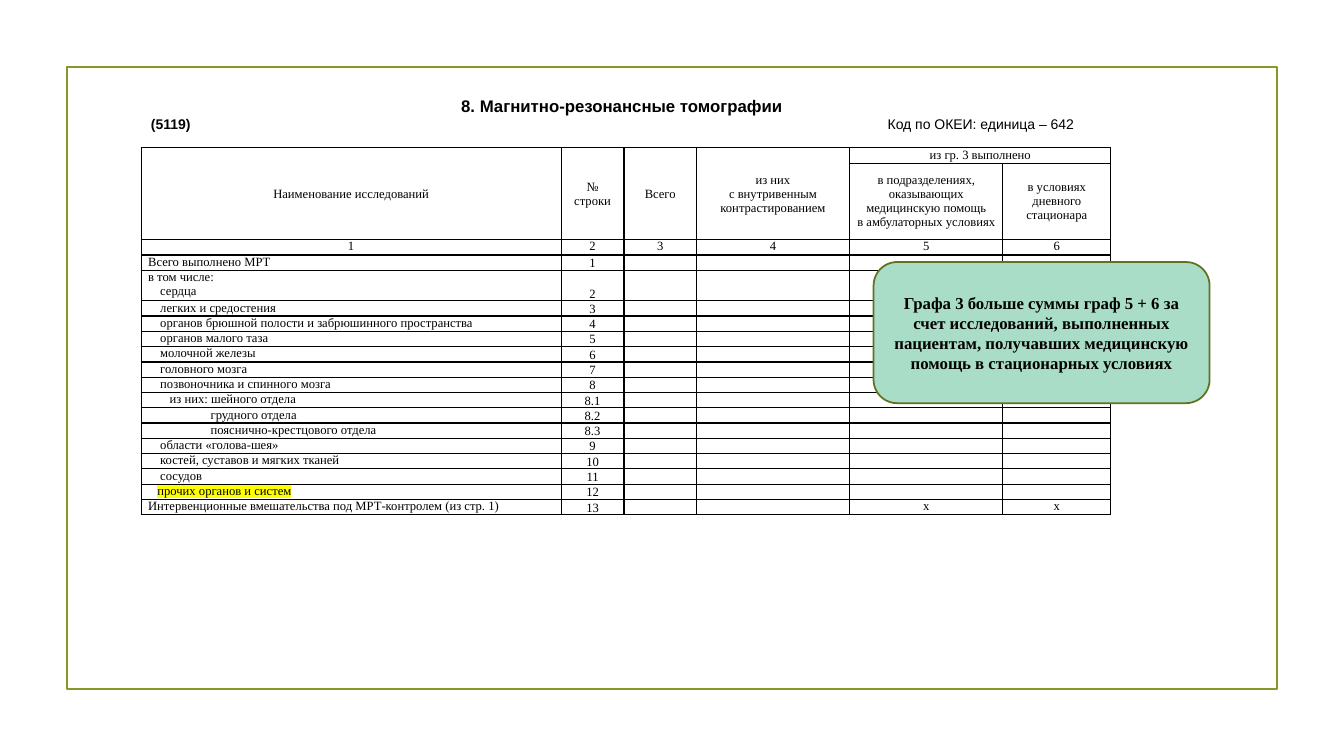
from dataclasses import dataclass

from lxml import etree
from pptx import Presentation
from pptx import util as u
from pptx.dml.color import RGBColor
from pptx.enum import shapes, text
from pptx.oxml import ns

UNIT = u.Inches(1) / 12
ALIGN = text.PP_ALIGN
ANCHOR = text.MSO_ANCHOR


@dataclass(frozen=True)
class Theme:
    serif: str = "Times New Roman"
    sans: str = "Arial"
    ink: str = "000000"
    frame: str = "83992A"
    callout: str = "A9DDC7"
    callout_line: str = "61711F"
    marker: str = "FFFF00"
    cell_size: float = 9
    code_size: float = 10
    title_size: float = 12
    outline: float = 1.25
    border: float = 1


THEME = Theme()
COLUMNS = (50, 7.5, 8.6, 18.25, 18.25, 12.85)
ROW, TALL_ROW, DOUBLE_ROW = 1.82, 9.12, 3.64
ITEM, SUBITEM, PART, OTHER = 1.44, 2.57, 7.44, 1.1
HEADINGS = (
    "Наименование исследований",
    "№\nстроки",
    "Всего",
    "из них\nс внутривенным контрастированием",
)
DONE_HEADING = "из гр. 3 выполнено"
DONE_PARTS = (
    "в подразделениях, оказывающих медицинскую помощь\nв амбулаторных условиях",
    "в условиях дневного стационара",
)
STUDIES = (
    ("1", [(0, "Всего выполнено МРТ")]),
    ("2", [(0, "в том числе:"), (ITEM, "сердца")]),
    ("3", [(ITEM, "легких и средостения")]),
    ("4", [(ITEM, "органов брюшной полости и забрюшинного пространства")]),
    ("5", [(ITEM, "органов малого таза")]),
    ("6", [(ITEM, "молочной железы")]),
    ("7", [(ITEM, "головного мозга")]),
    ("8", [(ITEM, "позвоночника и спинного мозга")]),
    ("8.1", [(SUBITEM, "из них: шейного отдела")]),
    ("8.2", [(PART, "грудного отдела")]),
    ("8.3", [(PART, "пояснично-крестцового отдела")]),
    ("9", [(ITEM, "области «голова-шея»")]),
    ("10", [(ITEM, "костей, суставов и мягких тканей")]),
    ("11", [(ITEM, "сосудов")]),
    ("12", [(OTHER, "прочих органов и систем")]),
    ("13", [(0, "Интервенционные вмешательства под МРТ-контролем (из стр. 1)")]),
)
HIGHLIGHTED = "12"
CROSSED = "13"


def grid(*cells):
    return [u.Emu(round(cell * UNIT)) for cell in cells]


def add_run(paragraph, words, size, face, bold=False, marker=None):
    run = paragraph.add_run()
    run.text = words
    run.font.size = u.Pt(size)
    run.font.bold = bold
    run.font.color.rgb = RGBColor.from_string(THEME.ink)
    run.font.name = face
    if marker:
        highlight = etree.Element(ns.qn("a:highlight"))
        etree.SubElement(highlight, ns.qn("a:srgbClr"), val=marker)
        run.font._element.find(ns.qn("a:solidFill")).addnext(highlight)


def add_outlined_shape(slide, kind, box, line, fill=None):
    shape = slide.shapes.add_shape(kind, *grid(*box))
    shape.shadow.inherit = False
    if fill:
        shape.fill.solid()
        shape.fill.fore_color.rgb = RGBColor.from_string(fill)
    else:
        shape.fill.background()
    shape.line.color.rgb = RGBColor.from_string(line)
    shape.line.width = u.Pt(THEME.outline)
    return shape


def style_cell(cell):
    cell.margin_left, cell.margin_right = grid(0.84, 0.84)
    cell.margin_top = cell.margin_bottom = 0
    cell.fill.background()
    properties = cell._tc.get_or_add_tcPr()
    for index, side in enumerate(("lnL", "lnR", "lnT", "lnB")):
        line = etree.Element(ns.qn(f"a:{side}"), w=str(u.Pt(THEME.border)))
        fill = etree.SubElement(line, ns.qn("a:solidFill"))
        etree.SubElement(fill, ns.qn("a:srgbClr"), val=THEME.ink)
        properties.insert(index, line)
    ending = etree.SubElement(cell.text_frame.paragraphs[0]._p,
                              ns.qn("a:endParaRPr"), sz=str(THEME.cell_size * 100))
    etree.SubElement(ending, ns.qn("a:latin"), typeface=THEME.serif)


def write_centred(cell, words, anchor=ANCHOR.TOP):
    cell.vertical_anchor = anchor
    paragraph = cell.text_frame.paragraphs[0]
    paragraph.alignment = ALIGN.CENTER
    for index, line in enumerate(words.split("\n")):
        if index:
            paragraph.add_line_break()
        add_run(paragraph, line, THEME.cell_size, THEME.serif)


def write_study(cell, lines, marker):
    frame = cell.text_frame
    for index, (indent, words) in enumerate(lines):
        paragraph = frame.add_paragraph() if index else frame.paragraphs[0]
        properties = paragraph._p.get_or_add_pPr()
        properties.set("marL", str(grid(indent)[0]))
        properties.set("indent", "0")
        add_run(paragraph, words, THEME.cell_size, THEME.serif, marker=marker)


def add_study_table(slide):
    heights = [ROW, TALL_ROW, ROW] + [
        DOUBLE_ROW if len(lines) > 1 else ROW for number, lines in STUDIES]
    box = grid(16.8, 17.6, sum(COLUMNS), sum(heights))
    table = slide.shapes.add_table(len(heights), len(COLUMNS), *box).table
    table.first_row = table.horz_banding = False
    for column, width in zip(table.columns, grid(*COLUMNS)):
        column.width = width
    for row, height in zip(table.rows, grid(*heights)):
        row.height = height
        for cell in row.cells:
            style_cell(cell)

    for index, heading in enumerate(HEADINGS):
        table.cell(0, index).merge(table.cell(1, index))
        write_centred(table.cell(0, index), heading, ANCHOR.MIDDLE)
    first_part = len(HEADINGS)
    table.cell(0, first_part).merge(table.cell(0, len(COLUMNS) - 1))
    write_centred(table.cell(0, first_part), DONE_HEADING, ANCHOR.MIDDLE)
    for index, part in enumerate(DONE_PARTS, first_part):
        write_centred(table.cell(1, index), part, ANCHOR.MIDDLE)
    for index in range(len(COLUMNS)):
        write_centred(table.cell(2, index), str(index + 1))

    for row, (number, lines) in enumerate(STUDIES, 3):
        marker = THEME.marker if number == HIGHLIGHTED else None
        write_study(table.cell(row, 0), lines, marker)
        write_centred(table.cell(row, 1), number, ANCHOR.BOTTOM)
        if number == CROSSED:
            for index in range(first_part, len(COLUMNS)):
                write_centred(table.cell(row, index), "x")


def add_title(slide):
    frame = slide.shapes.add_textbox(*grid(16.8, 10.8, 114.5, 5.6)).text_frame
    frame.word_wrap = True
    frame.vertical_anchor = ANCHOR.MIDDLE
    title = frame.paragraphs[0]
    title.alignment = ALIGN.CENTER
    add_run(title, "8. Магнитно-резонансные томографии", THEME.title_size, THEME.sans, True)
    codes = frame.add_paragraph()
    tabs = etree.SubElement(codes._p.get_or_add_pPr(), ns.qn("a:tabLst"))
    etree.SubElement(tabs, ns.qn("a:tab"), pos=str(grid(87.7)[0]), algn="l")
    add_run(codes, "(5119)\t", THEME.code_size, THEME.sans, True)
    add_run(codes, "Код по ОКЕИ: единица – 642", THEME.code_size, THEME.sans)


def add_callout(slide, words):
    shape = add_outlined_shape(slide, shapes.MSO_SHAPE.ROUNDED_RECTANGLE,
                               (104, 31.2, 40, 16.8), THEME.callout_line, THEME.callout)
    frame = shape.text_frame
    frame.word_wrap = True
    frame.vertical_anchor = ANCHOR.MIDDLE
    paragraph = frame.paragraphs[0]
    paragraph.alignment = ALIGN.CENTER
    add_run(paragraph, words, THEME.title_size, THEME.serif, True)


def main():
    presentation = Presentation()
    presentation.slide_width, presentation.slide_height = grid(160, 90)
    slide = presentation.slides.add_slide(presentation.slide_layouts[6])
    add_outlined_shape(slide, shapes.MSO_SHAPE.RECTANGLE, (8, 8, 144, 74), THEME.frame)
    add_study_table(slide)
    add_title(slide)
    add_callout(slide, "Графа 3 больше суммы граф 5 + 6 за счет исследований, "
                       "выполненных пациентам, получавших медицинскую помощь "
                       "в стационарных условиях")
    presentation.save("out.pptx")


if __name__ == "__main__":
    main()
